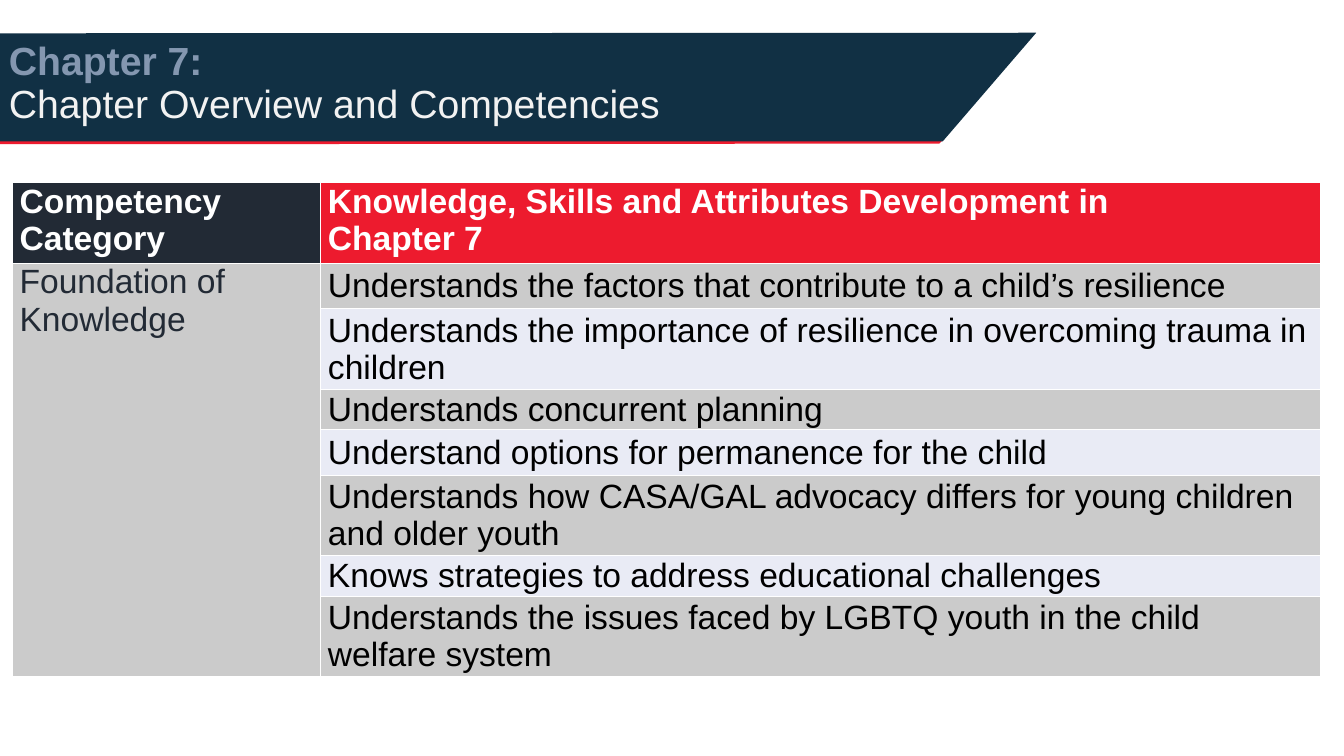
from pptx import Presentation
from pptx.dml.color import RGBColor
from pptx.enum.text import MSO_ANCHOR
from pptx.util import Pt

NAVY = RGBColor(0x11, 0x30, 0x44)
RED = RGBColor(0xED, 0x1B, 0x2E)
SLATE = RGBColor(0x22, 0x2A, 0x35)
BLUE_GRAY = RGBColor(0x84, 0x97, 0xB0)
OFF_WHITE = RGBColor(0xF2, 0xF2, 0xF2)
WHITE = RGBColor(0xFF, 0xFF, 0xFF)
BLACK = RGBColor(0, 0, 0)
GRAY = RGBColor(0xCB, 0xCB, 0xCB)
LAVENDER = RGBColor(0xE9, 0xEB, 0xF5)


def style_font(font, size, color, bold=False):
    font.name = "Arial"
    font.size = Pt(size)
    font.color.rgb = color
    font.bold = bold


def fill_cell(cell, lines, fill, color, bold=False, anchor=MSO_ANCHOR.TOP):
    cell.fill.solid()
    cell.fill.fore_color.rgb = fill
    cell.margin_left = cell.margin_right = Pt(5.4)
    cell.margin_top = cell.margin_bottom = 0
    cell.vertical_anchor = anchor
    cell.text_frame.text = lines
    for paragraph in cell.text_frame.paragraphs:
        style_font(paragraph.font, 24, color, bold)


prs = Presentation()
prs.slide_width = Pt(960)
prs.slide_height = Pt(540)
slide = prs.slides.add_slide(prs.slide_layouts[6])

banner_parts = [
    (RED, [(-0.7, 99.4), (674, 99.4), (671, 102.6), (-0.7, 103)]),
    (NAVY, [(740.2, 23.4), (0, 23.8), (-0.7, 101), (673.4, 101)]),
]
for color, points in banner_parts:
    builder = slide.shapes.build_freeform(Pt(points[0][0]), Pt(points[0][1]))
    builder.add_line_segments([(Pt(x), Pt(y)) for x, y in points[1:]])
    banner = builder.convert_to_shape()
    banner.shadow.inherit = False
    banner.fill.solid()
    banner.fill.fore_color.rgb = color
    banner.line.fill.background()

title = slide.shapes.add_textbox(Pt(-0.7), Pt(7.9), Pt(828), Pt(104.4)).text_frame
title.word_wrap = True
title.vertical_anchor = MSO_ANCHOR.MIDDLE
heading = title.paragraphs[0]
heading.line_spacing = 0.9
chapter = heading.add_run()
chapter.text = "Chapter 7:"
style_font(chapter.font, 28, BLUE_GRAY, True)
heading.add_line_break()
topic = heading.add_run()
topic.text = "Chapter Overview and Competencies"
style_font(topic.font, 28, OFF_WHITE)

competencies = [
    ("Understands the factors that contribute to a child’s resilience", 32.4),
    ("Understands the importance of resilience in overcoming trauma in children", 53),
    ("Understands concurrent planning", 28.8),
    ("Understand options for permanence for the child", 32.4),
    ("Understands how CASA/GAL advocacy differs for young children and older youth", 53),
    ("Knows strategies to address educational challenges", 26),
    ("Understands the issues faced by LGBTQ youth in the child welfare system", 53),
]
header_height = 53
table_height = header_height + sum(height for _, height in competencies)
table = slide.shapes.add_table(
    len(competencies) + 1, 2, Pt(8.6), Pt(130.5), Pt(934.6), Pt(table_height)
).table
table.columns[0].width = Pt(220.3)
table.columns[1].width = Pt(714.3)
table.rows[0].height = Pt(header_height)

fill_cell(table.cell(0, 0), "Competency Category", SLATE, WHITE, True)
fill_cell(
    table.cell(0, 1),
    "Knowledge, Skills and Attributes Development in\nChapter 7",
    RED, WHITE, True,
)
table.cell(1, 0).merge(table.cell(len(competencies), 0))
fill_cell(table.cell(1, 0), "Foundation of Knowledge", GRAY, SLATE)
for row, (competency, height) in enumerate(competencies, start=1):
    table.rows[row].height = Pt(height)
    band = GRAY if row % 2 else LAVENDER
    fill_cell(table.cell(row, 1), competency, band, BLACK, anchor=MSO_ANCHOR.MIDDLE)

prs.save("out.pptx")
